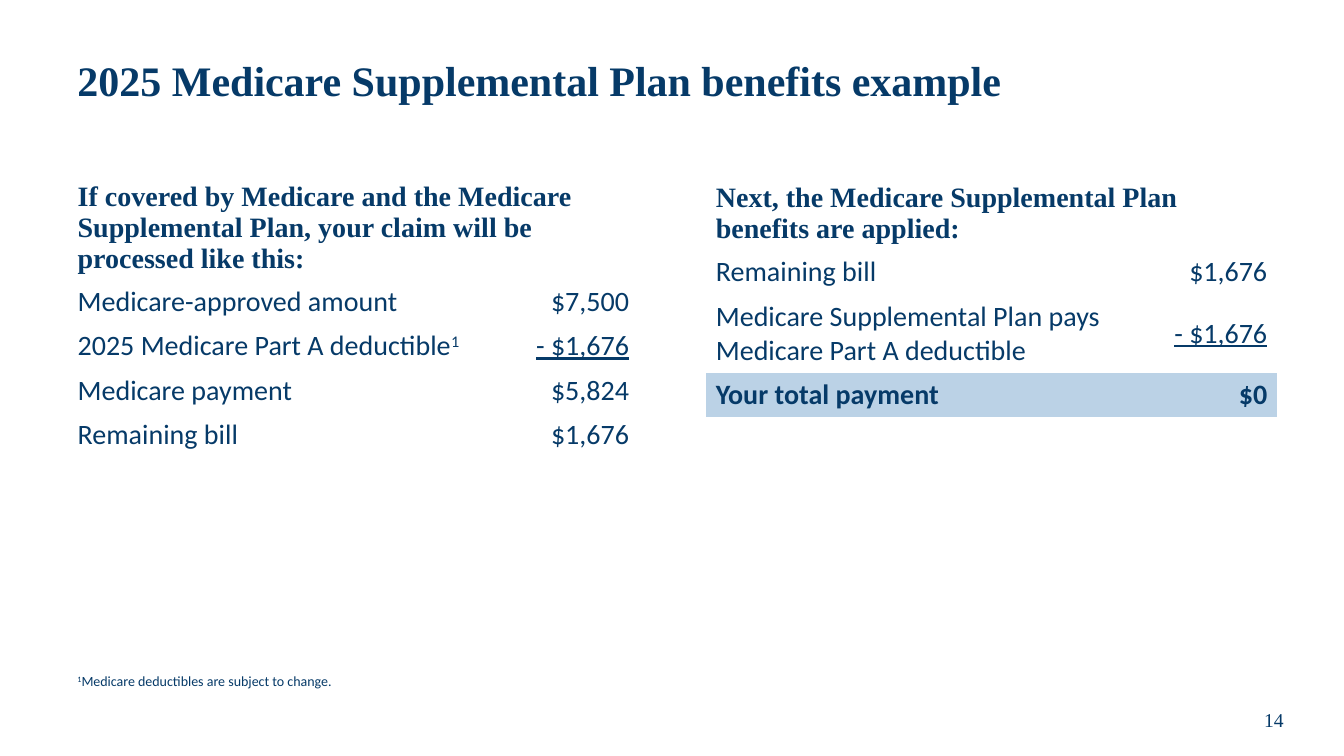
from pptx import Presentation
from pptx.dml.color import RGBColor
from pptx.enum.text import MSO_ANCHOR as Anchor, MSO_AUTO_SIZE as AutoSize, PP_ALIGN as Align
from pptx.util import Inches, Pt

NAVY, PALE_BLUE = "063A68", "BBD2E6"
SERIF, SANS = "Times New Roman", "Calibri"
NO_STYLE = "{2D5ABB26-0587-4C30-8999-92F81FD0307C}"


def color(hex_string):
    return RGBColor.from_string(hex_string)


def add_text(paragraph, text, size, face, superscript=False, **formats):
    run = paragraph.add_run()
    run.text = text
    run.font.color.rgb = color(NAVY)
    for key, value in {"size": Pt(size), "name": face, **formats}.items():
        setattr(run.font, key, value)
    if superscript:
        run.font._element.set("baseline", "30000")


presentation = Presentation()
presentation.slide_width, presentation.slide_height = Inches(13.33), Inches(7.5)
slide = presentation.slides.add_slide(presentation.slide_layouts[6])

# Title, footnote and page number
captions = [
    (0.67, 0.25, 12, 1.15, Anchor.MIDDLE, Align.LEFT,
     [("2025 Medicare Supplemental Plan benefits example", 30, SERIF, False, True)]),
    (0.67, 6.62, 2.77, 0.27, Anchor.TOP, Align.LEFT,
     [("1", 10, SANS, True, False),
      ("Medicare deductibles are subject to change.", 10, SANS, False, False)]),
    (12.05, 6.89, 1.17, 0.5, Anchor.MIDDLE, Align.CENTER, [("14", 14, SERIF, False, False)]),
]
for left, top, width, height, anchor, align, parts in captions:
    caption = slide.shapes.add_textbox(*map(Inches, (left, top, width, height))).text_frame
    caption.word_wrap = True
    caption.auto_size = AutoSize.NONE
    caption.vertical_anchor = anchor
    caption.paragraphs[0].alignment = align
    caption.paragraphs[0].line_spacing = 0.9 if top < 1 else 1.0
    for text, size, face, superscript, bold in parts:
        add_text(caption.paragraphs[0], text, size, face, superscript, bold=bold)

# Claim tables: left, top, row heights, heading, (label, footnote mark, amount)
claims = [
    (0.67, 1.75, [1.02, 0.44, 0.44, 0.44, 0.44],
     "If covered by Medicare and the Medicare Supplemental Plan, "
     "your claim will be processed like this:",
     [("Medicare-approved amount", "", "$7,500"),
      ("2025 Medicare Part A deductible", "1", "- $1,676"),
      ("Medicare payment", "", "$5,824"),
      ("Remaining bill", "", "$1,676")]),
    (7, 1.76, [0.72, 0.44, 0.78, 0.44],
     "Next, the Medicare Supplemental Plan benefits are applied:",
     [("Remaining bill", "", "$1,676"),
      ("Medicare Supplemental Plan pays Medicare Part A deductible", "", "- $1,676"),
      ("Your total payment", "", "$0")]),
]
for left, top, heights, heading, entries in claims:
    frame = slide.shapes.add_table(len(heights), 2, Inches(left), Inches(top),
                                   Inches(5.67), Inches(sum(heights)))
    claim = frame.table
    claim.first_row = claim.horz_banding = False
    claim._tbl.tblPr[0].text = NO_STYLE
    for column, width in zip(claim.columns, (4.36, 1.31)):
        column.width = Inches(width)
    for row, height in zip(claim.rows, heights):
        row.height = Inches(height)
    for cell in claim.iter_cells():
        cell.vertical_anchor = Anchor.MIDDLE
        cell.fill.background()

    # Heading across both columns
    claim.cell(0, 0).merge(claim.cell(0, 1))
    add_text(claim.cell(0, 0).text_frame.paragraphs[0], heading, 20, SERIF, bold=True)

    # Labels and amounts; deductions underlined, total highlighted
    for row_number, (label, mark, amount) in enumerate(entries, start=1):
        label_cell, amount_cell = claim.cell(row_number, 0), claim.cell(row_number, 1)
        total = label == "Your total payment"
        if total:
            for cell in (label_cell, amount_cell):
                cell.fill.solid()
                cell.fill.fore_color.rgb = color(PALE_BLUE)
        label_line = label_cell.text_frame.paragraphs[0]
        add_text(label_line, label, 20, SANS, bold=total)
        if mark:
            add_text(label_line, mark, 20, SANS, superscript=True, bold=False)
        amount_line = amount_cell.text_frame.paragraphs[0]
        amount_line.alignment = Align.RIGHT
        add_text(amount_line, amount, 20, SANS, bold=total, underline=amount.startswith("-"))

presentation.save("out.pptx")
